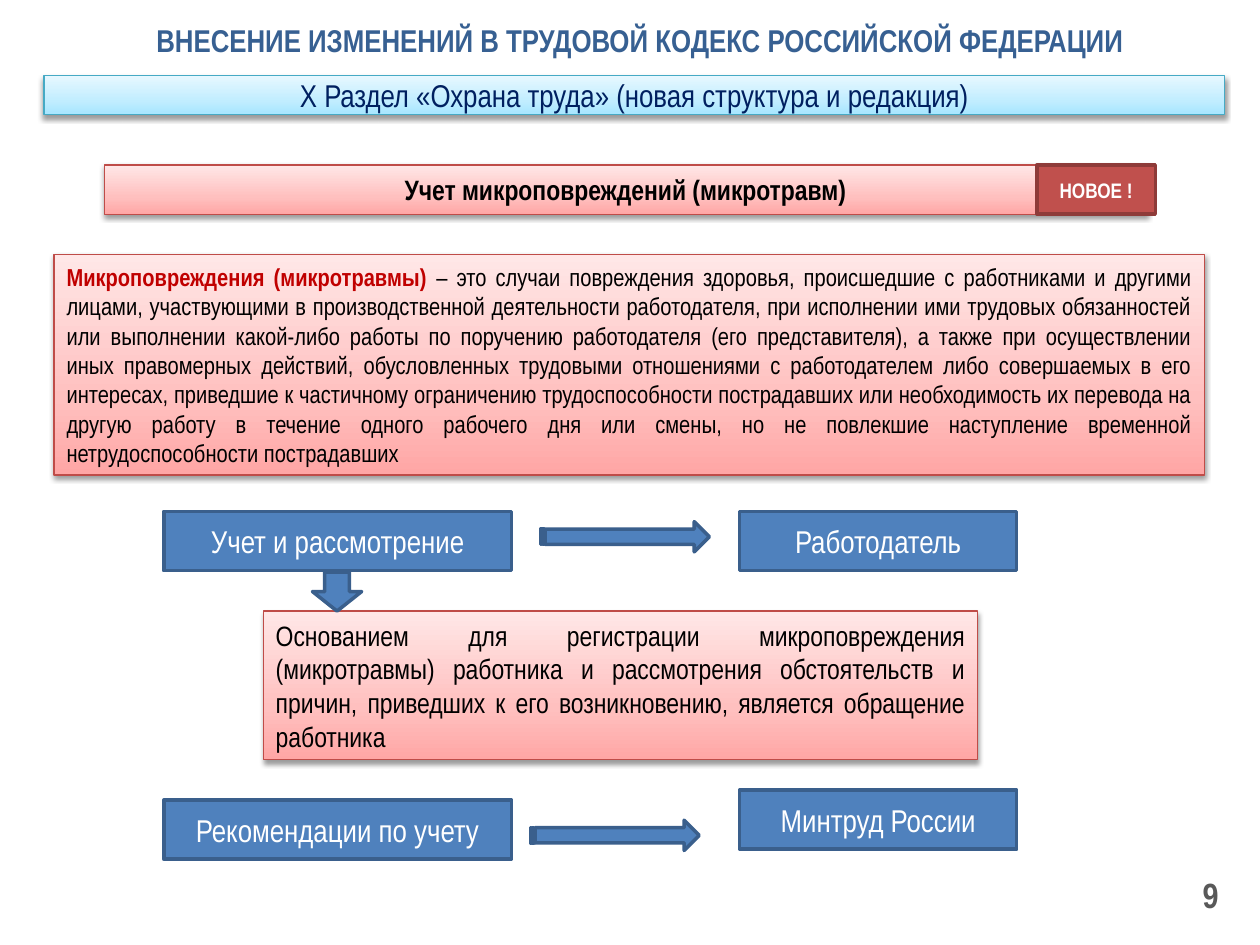
from typing import NamedTuple
from lxml.etree import SubElement
from pptx import Presentation
from pptx.dml.color import RGBColor
from pptx.enum.shapes import MSO_SHAPE
from pptx.enum.text import MSO_ANCHOR, MSO_AUTO_SIZE, PP_ALIGN
from pptx.oxml.ns import qn
from pptx.util import Inches, Pt

FONT = "Arial Narrow"
HEX = {
    "title": "376092", "page": "595959", "navy": "002060", "term": "C00000",
    "black": "000000", "white": "FFFFFF",
}


class Run(NamedTuple):
    text: str
    size: int
    color: str = "black"
    bold: bool = False


class Look(NamedTuple):
    fill: tuple[str, ...]  # one colour, or three gradient stops from the bottom up
    line: str
    width: float


class Box(NamedTuple):
    look: str
    left: float
    top: float
    width: float
    height: float
    runs: tuple[Run, ...] = ()
    align: PP_ALIGN = PP_ALIGN.CENTER
    kind: MSO_SHAPE = MSO_SHAPE.RECTANGLE
    grow: bool = False


LOOKS = {
    "blue": Look(("4F81BD",), "3A5F8C", 2),
    "red": Look(("C0504D",), "8E3B39", 2),
    "pink": Look(("FFA6A5", "FFC0BF", "FFE7E7"), "BF4C48", 0.75),
    "aqua": Look(("A7E6FF", "C1EDFF", "E7F8FF"), "46AAC5", 0.75),
}
STOPS = (0, 35, 100)


def write(frame, runs: tuple[Run, ...], align: PP_ALIGN) -> None:
    frame.word_wrap = True
    frame.vertical_anchor = MSO_ANCHOR.MIDDLE
    para = frame.paragraphs[0]
    para.alignment = align
    for item in runs:
        run = para.add_run()
        run.text = item.text
        run.font.name = FONT
        run.font.size = Pt(item.size)
        run.font.bold = item.bold
        run.font.color.rgb = RGBColor.from_string(HEX[item.color])


def shade(shape, colors: tuple[str, ...]) -> None:
    """Three-stop gradient with a soft shadow below."""
    shape.fill.gradient()
    shape.fill.gradient_angle = 90
    props = shape._element.spPr
    stops = props.find(".//" + qn("a:gsLst"))
    stops.clear()
    for pos, color in zip(STOPS, colors):
        stop = SubElement(stops, qn("a:gs"), pos=str(pos * 1000))
        SubElement(stop, qn("a:srgbClr"), val=color)
    glow = SubElement(
        props.find(qn("a:effectLst")), qn("a:outerShdw"),
        blurRad=str(Pt(3.1)), dist=str(Pt(1.6)), dir="5400000", rotWithShape="0",
    )
    tint = SubElement(glow, qn("a:srgbClr"), val=HEX["black"])
    SubElement(tint, qn("a:alpha"), val="38000")


def draw(slide, box: Box) -> None:
    look = LOOKS[box.look]
    shape = slide.shapes.add_shape(
        box.kind, Inches(box.left), Inches(box.top),
        Inches(box.width), Inches(box.height),
    )
    shape.shadow.inherit = False
    shape.line.color.rgb = RGBColor.from_string(look.line)
    shape.line.width = Pt(look.width)
    if len(look.fill) > 1:
        shade(shape, look.fill)
    else:
        shape.fill.solid()
        shape.fill.fore_color.rgb = RGBColor.from_string(look.fill[0])
    if box.runs:
        write(shape.text_frame, box.runs, box.align)
    if box.grow:
        shape.text_frame.auto_size = MSO_AUTO_SIZE.SHAPE_TO_FIT_TEXT


def step(text: str, left: float, top: float, width: float) -> Box:
    return Box("blue", left, top, width, 0.47, (Run(text, 18, "white"),))


def arrow(left: float, top: float) -> Box:
    return Box("blue", left, top, 1.34, 0.24, kind=MSO_SHAPE.STRIPED_RIGHT_ARROW)


BASIS = (
    "Основанием для регистрации микроповреждения (микротравмы) работника и "
    "рассмотрения обстоятельств и причин, приведших к его возникновению, "
    "является обращение работника"
)
TERM = "Микроповреждения (микротравмы)"
SENSE = (
    " – это случаи повреждения здоровья, происшедшие с работниками и другими "
    "лицами, участвующими в производственной деятельности работодателя, при "
    "исполнении ими трудовых обязанностей или выполнении какой-либо работы по "
    "поручению работодателя (его представителя), а также при осуществлении иных "
    "правомерных действий, обусловленных трудовыми отношениями с работодателем "
    "либо совершаемых в его интересах, приведшие к частичному ограничению "
    "трудоспособности пострадавших или необходимость их перевода на другую "
    "работу в течение одного рабочего дня или смены, но не повлекшие наступление "
    "временной нетрудоспособности пострадавших"
)

BOXES = (
    # Topic bar
    Box("pink", 0.83, 1.31, 8.27, 0.39,
        (Run("Учет микроповреждений (микротравм)", 16, bold=True),)),
    # Who does what
    step("Учет и рассмотрение", 1.3, 4.06, 2.76),
    step("Работодатель", 5.87, 4.06, 2.2),
    step("Рекомендации по учету", 1.3, 6.35, 2.76),
    step("Минтруд России", 5.87, 6.27, 2.2),
    arrow(4.29, 4.14),
    arrow(4.21, 6.51),
    # Grounds for registration
    Box("pink", 2.09, 4.85, 5.67, 1.18, (Run(BASIS, 16),),
        PP_ALIGN.JUSTIFY, grow=True),
    Box("blue", 2.48, 4.54, 0.39, 0.31, kind=MSO_SHAPE.DOWN_ARROW),
    # Definition
    Box("pink", 0.43, 2.02, 9.13, 1.75,
        (Run(TERM, 14, "term", True), Run(SENSE, 14)),
        PP_ALIGN.JUSTIFY, grow=True),
    # Section bar and badge
    Box("aqua", 0.35, 0.6, 9.37, 0.31,
        (Run("Х Раздел «Охрана труда» (новая структура и редакция)", 18, "navy"),)),
    Box("red", 8.23, 1.31, 0.94, 0.39, (Run("НОВОЕ !", 12, "white", True),)),
)


def main() -> None:
    deck = Presentation()
    deck.slide_width, deck.slide_height = Inches(10), Inches(7.5)
    slide = deck.slides.add_slide(deck.slide_layouts[5])

    # Page number
    page = slide.shapes.add_textbox(
        Inches(7.44), Inches(6.9), Inches(2.33), Inches(0.4))
    write(page.text_frame, (Run("9", 20, "page", True),), PP_ALIGN.RIGHT)

    # Title
    title = slide.shapes.title
    title.left, title.top = Inches(0.83), Inches(0)
    title.width, title.height = Inches(8.5), Inches(0.63)
    head = "ВНЕСЕНИЕ ИЗМЕНЕНИЙ В ТРУДОВОЙ КОДЕКС РОССИЙСКОЙ ФЕДЕРАЦИИ"
    write(title.text_frame, (Run(head, 18, "title", True),), PP_ALIGN.CENTER)
    title.text_frame.auto_size = MSO_AUTO_SIZE.NONE

    for box in BOXES:
        draw(slide, box)
    deck.save("out.pptx")


if __name__ == "__main__":
    main()
